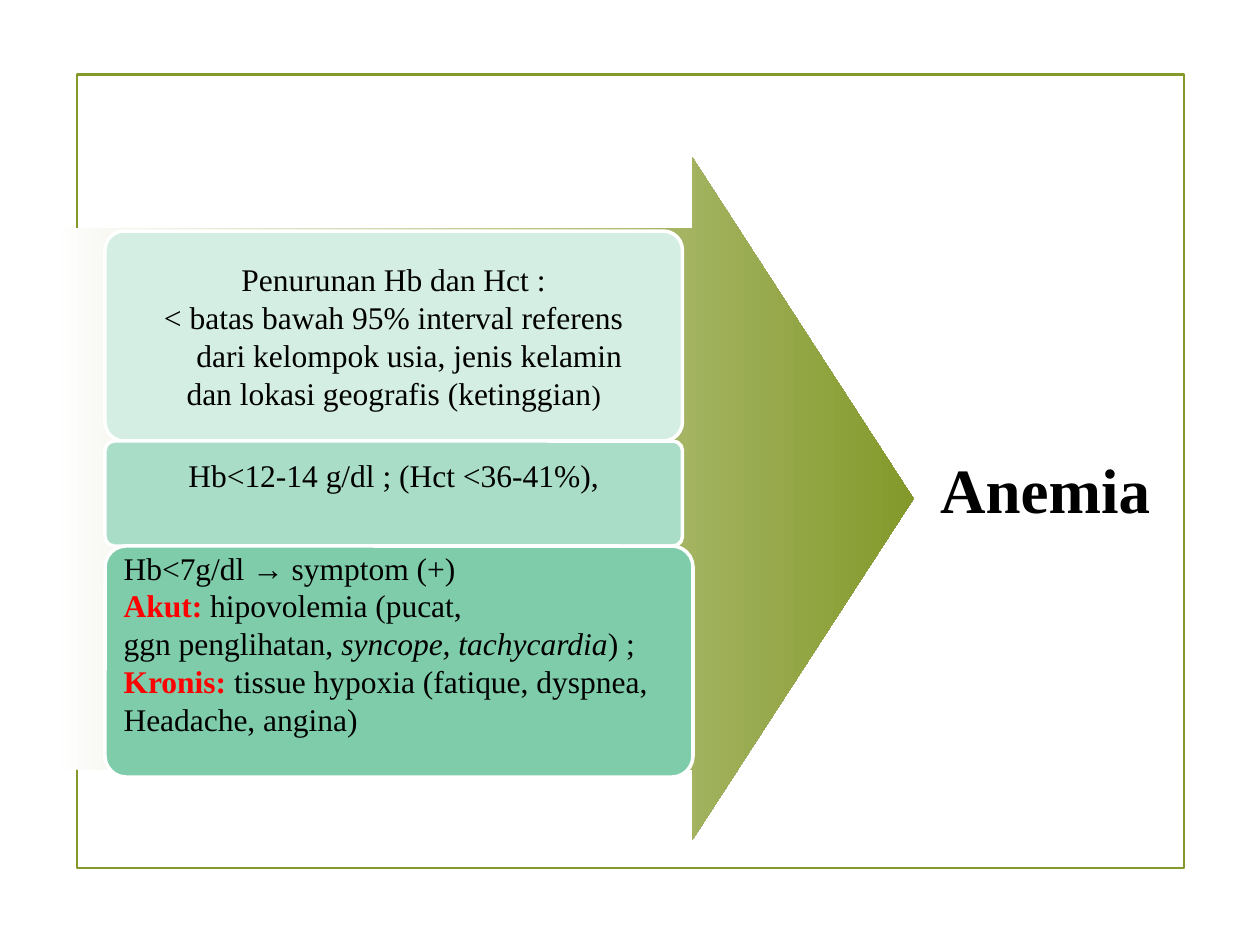
from pptx import Presentation
from pptx.dml.color import RGBColor
from pptx.enum.shapes import MSO_SHAPE
from pptx.enum.text import MSO_ANCHOR, MSO_AUTO_SIZE, PP_ALIGN
from pptx.util import Inches, Pt

RECT, ROUND, ARROW = MSO_SHAPE.RECTANGLE, MSO_SHAPE.ROUNDED_RECTANGLE, MSO_SHAPE.RIGHT_ARROW
MIDDLE, NO_FIT = MSO_ANCHOR.MIDDLE, MSO_AUTO_SIZE.NONE
LEFT, CENTER = PP_ALIGN.LEFT, PP_ALIGN.CENTER
FONT = "Times New Roman"
UNIT = Inches(1) // 12
COLORS = {"olive": "83992A", "white": "FFFFFF", "black": "000000", "red": "FF0000",
          "mint": "D4EEE3", "aqua": "A9DDC7", "green": "7FCCAB"}


def rgb(name):
    return RGBColor.from_string(COLORS[name])


def add_run(p, text, size=18, color="black", bold=False, italic=False):
    r = p.add_run()
    r.text = text
    f = r.font
    f.name, f.size, f.bold, f.italic = FONT, Pt(size), bold, italic
    f.color.rgb = rgb(color)


class Deck:
    """Slide builder on a grid of twelve units to the inch."""

    def __init__(self):
        self.prs = Presentation()
        self.prs.slide_width, self.prs.slide_height = 120 * UNIT, 90 * UNIT
        self.s = self.prs.slides.add_slide(self.prs.slide_layouts[5])

    def shape(self, kind, box, fill=None, line=None, width=2):
        sp = self.s.shapes.add_shape(kind, *(round(v * UNIT) for v in box))
        sp.shadow.inherit = False
        if fill:
            sp.fill.solid()
            sp.fill.fore_color.rgb = rgb(fill)
        else:
            sp.fill.background()
        if line:
            sp.line.color.rgb = rgb(line)
            sp.line.width = Pt(width)
        else:
            sp.line.fill.background()
        return sp

    def arrow(self, box, start, end):
        sp = self.shape(ARROW, box)
        sp.adjustments[0], sp.adjustments[1] = 0.793, 0.324
        sp.fill.gradient()
        sp.fill.gradient_angle = 0
        for stop, color in zip(sp.fill.gradient_stops, (start, end)):
            stop.color.rgb = rgb(color)

    def card(self, box, fill, lines, align=CENTER, bottom=0.05):
        sp = self.shape(ROUND, box, fill, "white")
        sp.adjustments[0] = 0.091
        tf = sp.text_frame
        tf.word_wrap, tf.vertical_anchor = True, MIDDLE
        tf.margin_bottom = Inches(bottom)
        for i, (indent, runs) in enumerate(lines):
            p = tf.paragraphs[0] if i == 0 else tf.add_paragraph()
            p.alignment = align
            if indent:
                p._p.get_or_add_pPr().set("marL", str(Inches(indent)))
            for text, style in runs:
                add_run(p, text, **style)

    def title(self, box, text, inset):
        sp = self.s.shapes.title
        sp.left, sp.top, sp.width, sp.height = (v * UNIT for v in box)
        tf = sp.text_frame
        tf.word_wrap, tf.auto_size, tf.vertical_anchor = True, NO_FIT, MIDDLE
        tf.margin_left, tf.margin_right = Inches(inset), 0
        p = tf.paragraphs[0]
        p.alignment = CENTER
        add_run(p, text, size=36, bold=True)


def main():
    deck = Deck()
    plain, key, term = {}, {"color": "red", "bold": True}, {"italic": True}
    deck.shape(RECT, (7.3, 7.1, 105.5, 75.6), line="olive", width=1.25)
    deck.arrow((5, 15, 82, 65), "white", "olive")
    deck.card((10, 22, 55, 20), "mint", [
        (0, [("Penurunan Hb dan Hct :", plain)]),
        (0, [("< batas bawah 95% interval referens", plain)]),
        (0.25, [("dari kelompok usia, jenis kelamin", plain)]),
        (0, [("dan lokasi geografis (ketinggian", plain), (")", {"size": 16})]),
    ])
    deck.card((10, 42, 55, 10), "aqua",
              [(0, [("Hb<12-14 g/dl ; (Hct <36-41%),", plain)])], bottom=0.34)
    deck.card((10, 52, 56, 22), "green", [
        (0, [("Hb<7g/dl → symptom (+)", plain)]),
        (0, [("Akut: ", key), ("hipovolemia (pucat,", plain)]),
        (0, [("ggn penglihatan, ", plain), ("syncope, tachycardia", term), (") ;", plain)]),
        (0, [("Kronis:", key), (" tissue hypoxia (fatique, dyspnea,", plain)]),
        (0, [("Headache, angina)", plain)]),
    ], align=LEFT, bottom=0.34)
    deck.title((81, 38, 33, 17), "Anemia", inset=0.34)
    deck.prs.save("out.pptx")


if __name__ == "__main__":
    main()
